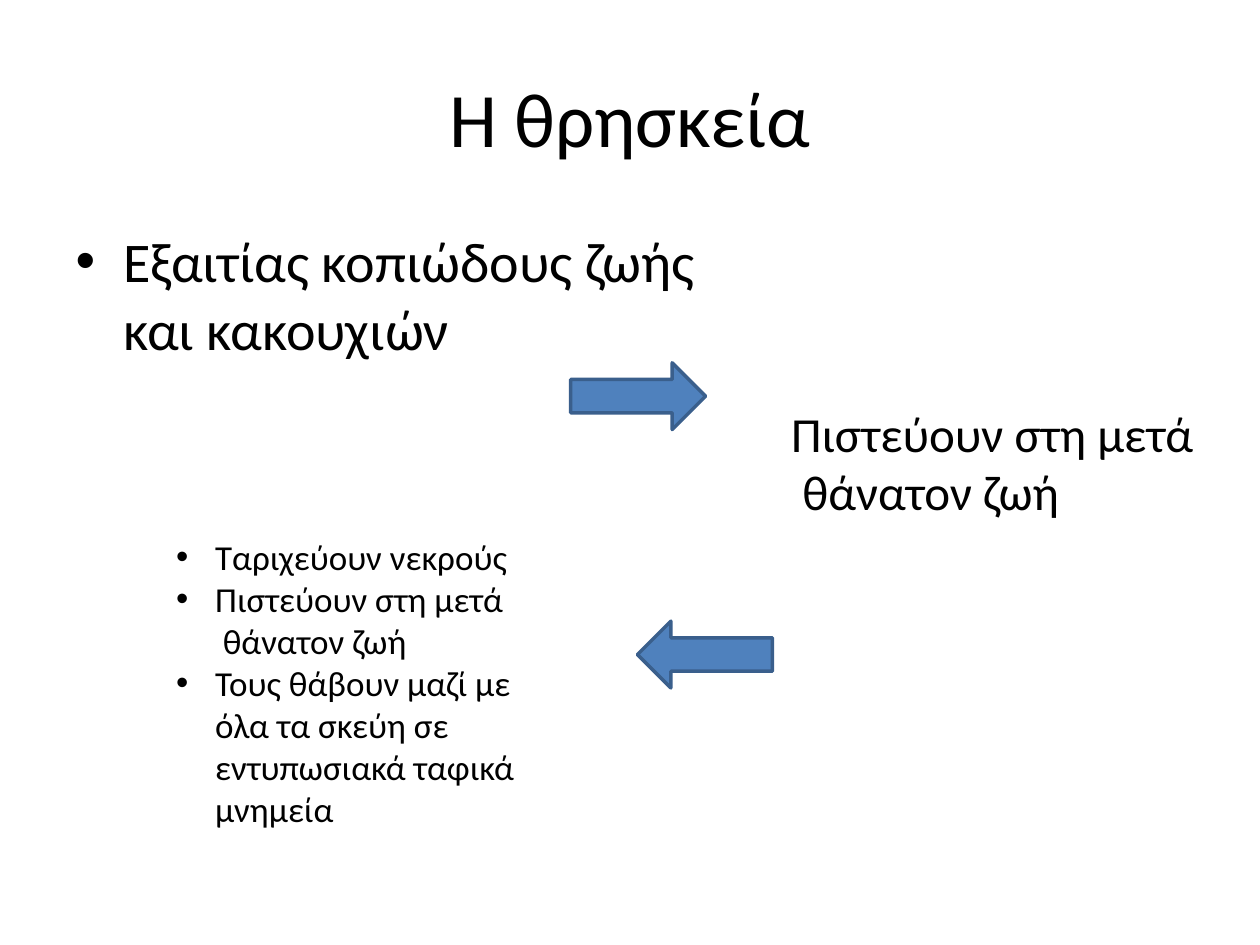
from dataclasses import dataclass

from lxml import etree
from pptx import Presentation
from pptx.dml.color import RGBColor
from pptx.enum.shapes import MSO_SHAPE
from pptx.enum.text import MSO_ANCHOR, PP_ALIGN
from pptx.oxml.ns import qn
from pptx.util import Inches, Pt

RIGHT_ARROW, LEFT_ARROW = MSO_SHAPE.RIGHT_ARROW, MSO_SHAPE.LEFT_ARROW
MIDDLE, TOP = MSO_ANCHOR.MIDDLE, MSO_ANCHOR.TOP
CENTER, LEFT = PP_ALIGN.CENTER, PP_ALIGN.LEFT


@dataclass(frozen=True)
class Theme:
    font: str = "Calibri"
    text: RGBColor = RGBColor(0x00, 0x00, 0x00)
    arrow_fill: RGBColor = RGBColor(0x4F, 0x81, 0xBD)
    arrow_line: RGBColor = RGBColor(0x3A, 0x5F, 0x8C)
    arrow_line_width: float = 2
    title_size: int = 44
    cause_size: int = 32
    belief_size: int = 28
    custom_size: int = 20


@dataclass(frozen=True)
class Box:
    left: float
    top: float
    width: float
    height: float

    def emu(self) -> tuple:
        return tuple(Inches(v) for v in (self.left, self.top, self.width, self.height))


@dataclass(frozen=True)
class Line:
    text: str
    indent: float = 0
    bullet: bool = False


@dataclass(frozen=True)
class Arrow:
    preset: MSO_SHAPE
    left: float
    top: float


THEME = Theme()
ARROW_WIDTH, ARROW_HEIGHT = 1.07, 0.53

TITLE = [Line("Η θρησκεία")]
CAUSE = [Line("Εξαιτίας κοπιώδους ζωής\vκαι κακουχιών", 0.38, True)]
BELIEF = [Line("Πιστεύουν στη μετά"), Line("θάνατον ζωή", 0.09)]
CUSTOMS = [
    Line("Ταριχεύουν νεκρούς", 0.31, True),
    Line("Πιστεύουν στη μετά", 0.31, True),
    Line("θάνατον ζωή", 0.37),
    Line("Τους θάβουν μαζί με όλα τα σκεύη σε εντυπωσιακά ταφικά μνημεία", 0.31, True),
]
ARROWS = [Arrow(RIGHT_ARROW, 4.53, 2.88), Arrow(LEFT_ARROW, 5.06, 4.93)]


def place(shape, box: Box) -> None:
    shape.left, shape.top, shape.width, shape.height = box.emu()


def set_indent(paragraph, line: Line) -> None:
    """Indent a paragraph, hanging its bullet if it has one."""
    properties = paragraph._p.get_or_add_pPr()
    indent = Inches(line.indent)
    properties.set("marL", str(indent))
    properties.set("indent", str(-indent if line.bullet else 0))
    if line.bullet:
        etree.SubElement(properties, qn("a:buFont")).set("typeface", "Arial")
        etree.SubElement(properties, qn("a:buChar")).set("char", "•")


def write(shape, lines: list[Line], size: int, align=LEFT, anchor=TOP, wrap: bool = True) -> None:
    frame = shape.text_frame
    frame.text = "\n".join(line.text for line in lines)
    frame.word_wrap = wrap
    frame.vertical_anchor = anchor
    for paragraph, line in zip(frame.paragraphs, lines):
        paragraph.alignment = align
        set_indent(paragraph, line)
        for run in paragraph.runs:
            run.font.name = THEME.font
            run.font.size = Pt(size)
            run.font.color.rgb = THEME.text


def draw_arrow(slide, arrow: Arrow) -> None:
    box = Box(arrow.left, arrow.top, ARROW_WIDTH, ARROW_HEIGHT)
    shape = slide.shapes.add_shape(arrow.preset, *box.emu())
    shape.shadow.inherit = False
    shape.fill.solid()
    shape.fill.fore_color.rgb = THEME.arrow_fill
    shape.line.color.rgb = THEME.arrow_line
    shape.line.width = Pt(THEME.arrow_line_width)


def main() -> None:
    deck = Presentation()
    deck.slide_width, deck.slide_height = Inches(10), Inches(7.5)
    slide = deck.slides.add_slide(deck.slide_layouts[1])

    # Title and cause
    title, cause = slide.shapes.title, slide.placeholders[1]
    place(title, Box(0.5, 0.3, 9, 1.25))
    write(title, TITLE, THEME.title_size, CENTER, MIDDLE)
    place(cause, Box(0.5, 1.75, 9, 4.95))
    write(cause, CAUSE, THEME.cause_size)

    # Arrows from cause to belief and from belief to customs
    for arrow in ARROWS:
        draw_arrow(slide, arrow)

    # Belief and burial customs
    belief = slide.shapes.add_textbox(*Box(6.18, 3.15, 3.43, 1.35).emu())
    write(belief, BELIEF, THEME.belief_size, wrap=False)
    customs = slide.shapes.add_textbox(*Box(1.3, 4.2, 3.13, 2.76).emu())
    write(customs, CUSTOMS, THEME.custom_size)

    deck.save("out.pptx")


if __name__ == "__main__":
    main()
